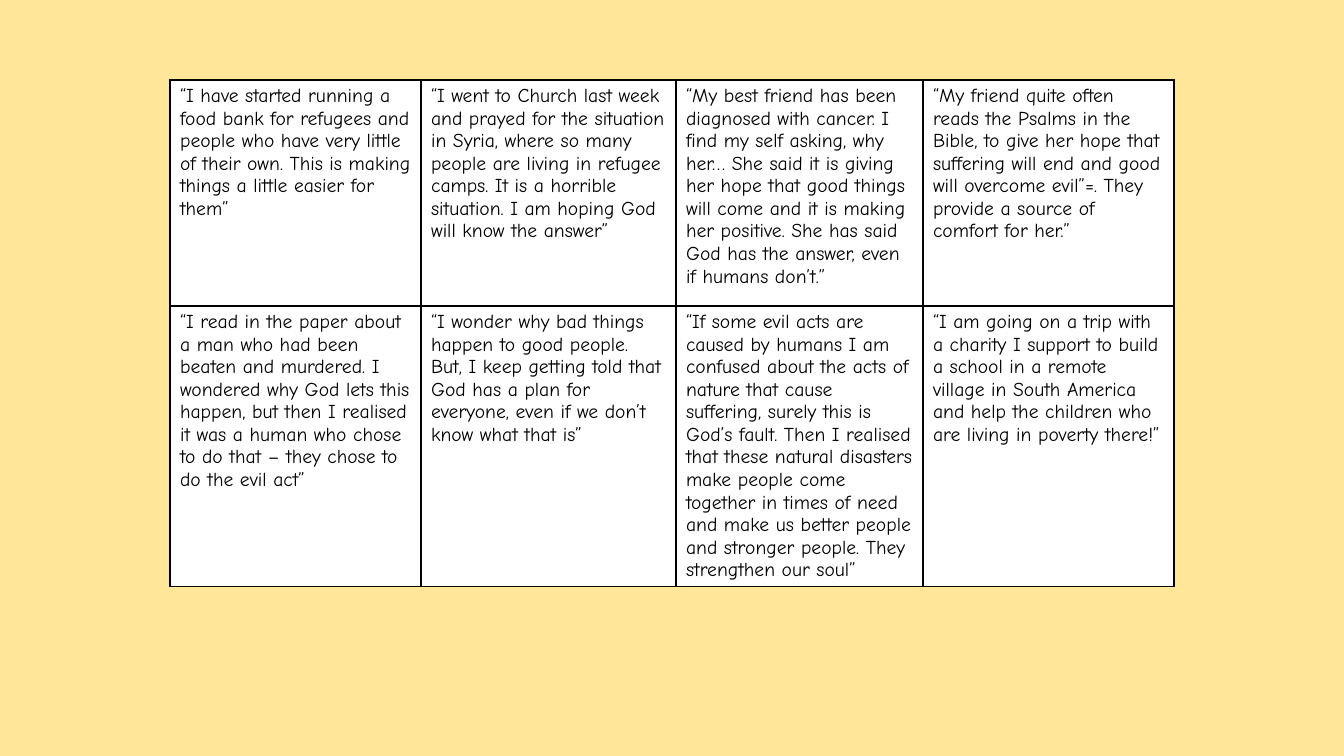
from lxml import etree
from pptx import Presentation
from pptx.dml.color import RGBColor
from pptx.oxml.ns import qn
from pptx.util import Emu, Pt

EMU_PER_PX = 12192000 / 1344
BLANK_LAYOUT = 6
FONT = "Comic Neue"
BACKGROUND, PAPER, INK = "FFE699", "FFFFFF", "000000"
BORDER_SIDES = ("a:lnL", "a:lnR", "a:lnT", "a:lnB")
COLUMN_WIDTHS = (251, 255, 247, 251)
ROW_HEIGHTS = (226, 280)

QUOTES = (
    (
        "“I have started running a food bank for refugees and people who have very little "
        "of their own. This is making things a little easier for them”",
        "“I went to Church last week and prayed for the situation in Syria, where so many "
        "people are living in refugee camps. It is a horrible situation. I am hoping God "
        "will know the answer”",
        "“My best friend has been diagnosed with cancer. I find my self asking, why her… "
        "She said it is giving her hope that good things will come and it is making her "
        "positive. She has said God has the answer, even if humans don’t.”",
        "“My friend quite often reads the Psalms in the Bible, to give her hope that "
        "suffering will end and good will overcome evil”=. They provide a source of "
        "comfort for her.”",
    ),
    (
        "“I read in the paper about a man who had been beaten and murdered. I wondered why "
        "God lets this happen, but then I realised it was a human who chose to do that – "
        "they chose to do the evil act”",
        "“I wonder why bad things happen to good people. But, I keep getting told that God "
        "has a plan for everyone, even if we don’t know what that is”",
        "“If some evil acts are caused by humans I am confused about the acts of nature "
        "that cause suffering, surely this is God’s fault. Then I realised that these "
        "natural disasters make people come together in times of need and make us better "
        "people and stronger people. They strengthen our soul”",
        "“I am going on a trip with a charity I support to build a school in a remote "
        "village in South America and help the children who are living in poverty there!”",
    ),
)


def px(length):
    return Emu(round(length * EMU_PER_PX))


def paint(fill, color):
    fill.solid()
    fill.fore_color.rgb = RGBColor.from_string(color)


def add_borders(cell):
    properties = cell._tc.get_or_add_tcPr()
    for position, side in enumerate(BORDER_SIDES):
        border = etree.Element(qn(side), w=str(Pt(1)))
        ink = etree.SubElement(border, qn("a:solidFill"))
        etree.SubElement(ink, qn("a:srgbClr"), val=INK)
        properties.insert(position, border)


def write_quote(cell, quote):
    cell.text = quote
    paint(cell.fill, PAPER)
    add_borders(cell)
    font = cell.text_frame.paragraphs[0].font
    font.name = FONT
    font.size = Pt(14)
    paint(font.fill, INK)


def add_quote_grid(slide, left, top):
    grid = slide.shapes.add_table(
        len(ROW_HEIGHTS), len(COLUMN_WIDTHS), px(left), px(top),
        px(sum(COLUMN_WIDTHS)), px(sum(ROW_HEIGHTS)),
    ).table
    grid.first_row = False
    grid.horz_banding = False
    for column, width in zip(grid.columns, COLUMN_WIDTHS):
        column.width = px(width)
    for row, height, quotes in zip(grid.rows, ROW_HEIGHTS, QUOTES):
        row.height = px(height)
        for cell, quote in zip(row.cells, quotes):
            write_quote(cell, quote)


def main():
    presentation = Presentation()
    presentation.slide_width = px(1344)
    presentation.slide_height = px(756)
    slide = presentation.slides.add_slide(presentation.slide_layouts[BLANK_LAYOUT])
    paint(slide.background.fill, BACKGROUND)
    add_quote_grid(slide, 170, 80)
    presentation.save("out.pptx")


if __name__ == "__main__":
    main()
